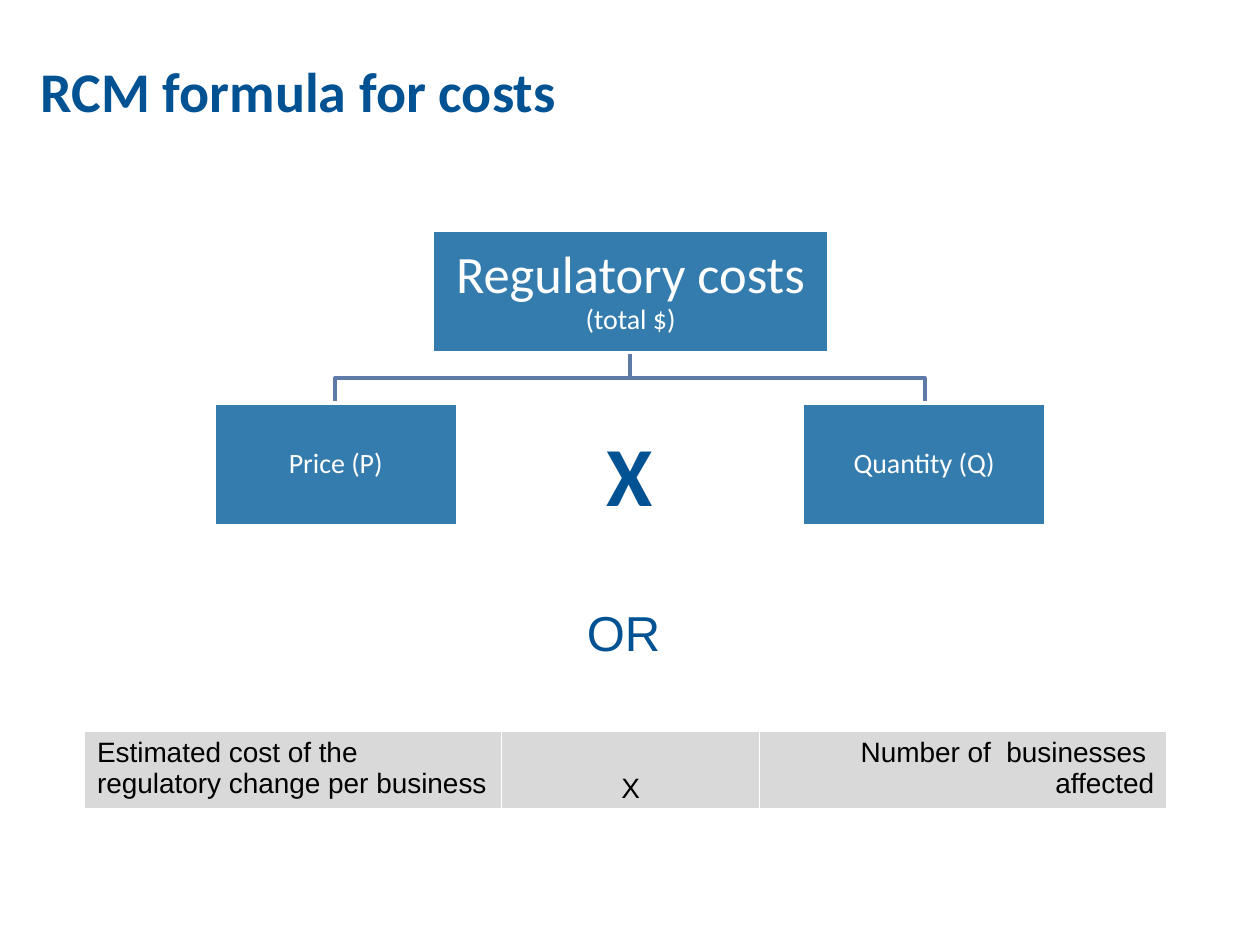
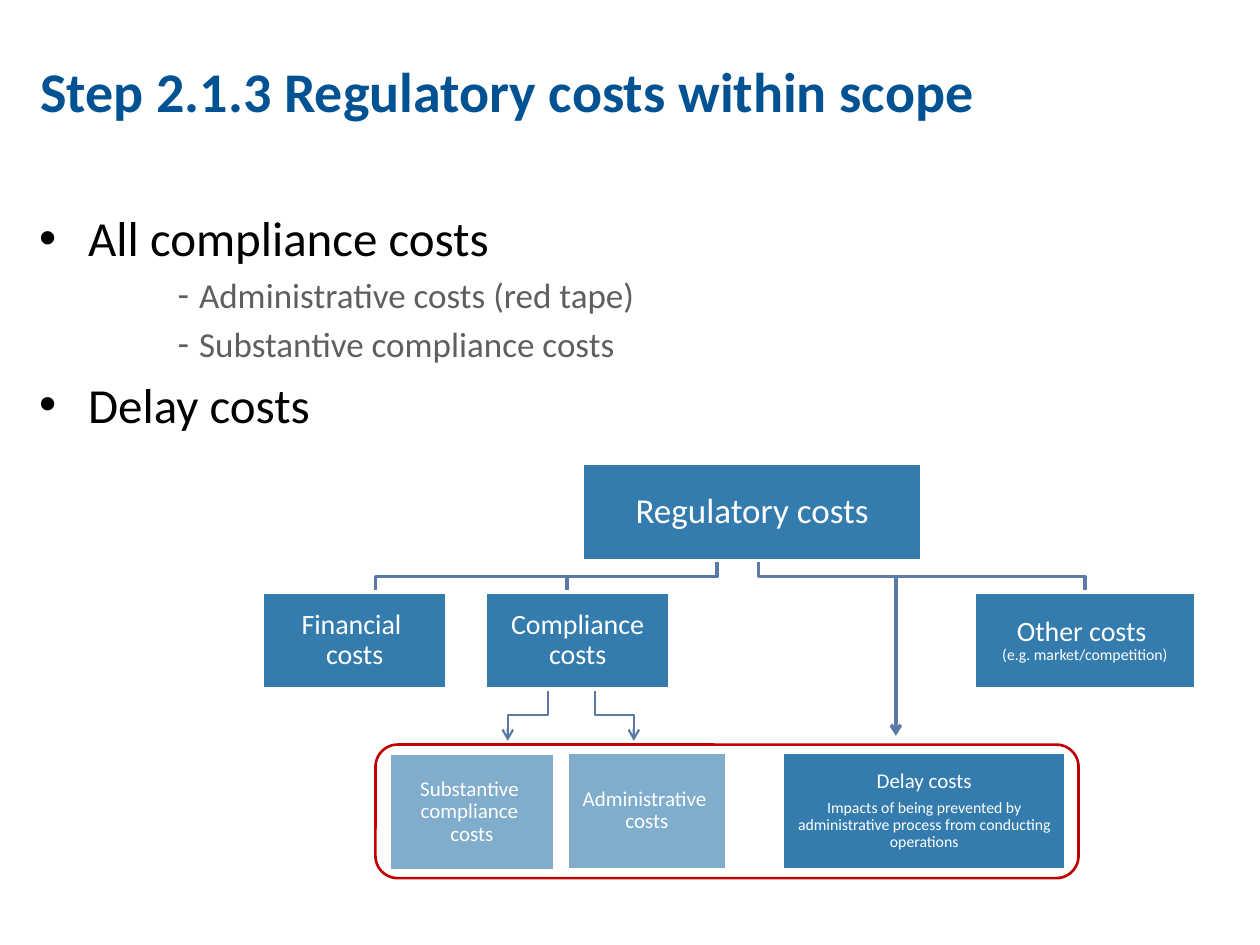
from lxml.etree import SubElement
from pptx import Presentation
from pptx.dml.color import RGBColor
from pptx.enum.shapes import MSO_CONNECTOR as CONN, MSO_SHAPE as SHAPE
from pptx.enum.text import MSO_ANCHOR as ANCHOR, MSO_AUTO_SIZE as FIT, PP_ALIGN as ALIGN
from pptx.oxml.ns import qn
from pptx.util import Inches, Pt

COLORS = {
    "title": "005293", "box": "347CAE", "light": "80ADCC", "line": "5E7AA7",
    "arrow": "597AA7", "scope": "C00000", "cell": "D9D9D9", "sub": "5F5F5F",
    "white": "FFFFFF", "black": "000000",
}

FORMULA_TITLE = "RCM formula for costs"
FORMULA_BOXES = [
    ((3.43, 1.83, 3.15, 0.97), "box", [[("Regulatory costs\v", 30), ("(total $)", 16)]]),
    ((1.7, 3.2, 1.93, 0.97), "box", [[("Price (P)", 16)]]),
    ((6.37, 3.2, 1.93, 0.97), "box", [[("Quantity (Q)", 16)]]),
]
FORMULA_ELBOWS = [((5, 2.8), (x, 3.2), "line", 2, False) for x in (2.66, 7.34)]
FORMULA_CELLS = [
    ("Estimated cost of the regulatory change per business", 3.31, ALIGN.LEFT, ANCHOR.TOP),
    ("X", 2.05, ALIGN.CENTER, ANCHOR.BOTTOM),
    ("Number of  businesses \vaffected", 3.23, ALIGN.RIGHT, ANCHOR.TOP),
]

SCOPE_TITLE = "Step 2.1.3 Regulatory costs within scope"
SCOPE_BULLETS = [
    (0, "All compliance costs"),
    (2, "Administrative costs (red tape)"),
    (2, "Substantive compliance costs"),
    (0, "Delay costs"),
]
BULLET_STYLES = {
    0: ("•", 0.39, -0.39, 28, "black"),
    2: ("-", 1.27, -0.17, 20, "sub"),
}
SCOPE_BOXES = [
    ((4.62, 3.68, 2.7, 0.77), "box", [[("Regulatory costs", 20)]]),
    ((2.08, 4.7, 1.47, 0.77), "box", [[("Financial \vcosts", 16)]]),
    ((3.85, 4.7, 1.47, 0.77), "box", [[("Compliance costs", 16)]]),
    ((7.73, 4.7, 1.76, 0.77), "box",
     [[("Other costs \v", 16), ("(e.g. market/competition)", 9)]]),
    ((3.09, 5.98, 1.31, 0.93), "light", [[("Substantive \vcompliance \vcosts", 12)]]),
    ((4.5, 5.97, 1.27, 0.93), "light", [[("Administrative \vcosts", 12)]]),
    ((6.21, 5.97, 2.25, 0.93), "box",
     [[("Delay costs", 12)],
      [("Impacts of being prevented by administrative process from conducting operations", 9)]]),
]
SCOPE_ELBOWS = [
    ((4.72, 5.47), (5.03, 5.88), "arrow", 1.25, True),
    ((4.35, 5.47), (4.03, 5.88), "arrow", 1.25, True),
    ((6.02, 4.44), (8.61, 4.71), "line", 2, False),
    ((5.69, 4.44), (2.98, 4.71), "arrow", 2, False),
]
SCOPE_LINES = [
    ((7.11, 4.57), (7.11, 5.84), "arrow", 2, True),
    ((4.5, 4.57), (4.5, 4.7), "arrow", 2, False),
]


def rgb(name):
    return RGBColor.from_string(COLORS[name])


def inches(values):
    return [Inches(v) for v in values]


def style(font, size, color, name="Calibri", bold=False):
    font.size, font.name, font.bold = Pt(size), name, bold
    font.color.rgb = rgb(color)


def place(sp, box):
    sp.left, sp.top, sp.width, sp.height = inches(box)


def add_slide(prs, layout, title):
    s = prs.slides.add_slide(prs.slide_layouts[layout])
    sp = s.shapes.title
    place(sp, (0.22, 0.4, 9.47, 0.63))
    tf = sp.text_frame
    tf.text = title
    tf.auto_size = FIT.NONE
    tf.vertical_anchor = ANCHOR.MIDDLE
    p = tf.paragraphs[0]
    p.alignment = ALIGN.LEFT
    style(p.runs[0].font, 32, "title", bold=True)
    return s


def add_box(s, box, fill, paragraphs):
    sp = s.shapes.add_shape(SHAPE.RECTANGLE, *inches(box))
    sp.shadow.inherit = False
    sp.fill.solid()
    sp.fill.fore_color.rgb = rgb(fill)
    sp.line.color.rgb = rgb("white")
    sp.line.width = Pt(2)
    tf = sp.text_frame
    tf.word_wrap = True
    tf.vertical_anchor = ANCHOR.MIDDLE
    tf.margin_left = tf.margin_right = tf.margin_top = tf.margin_bottom = Inches(0.01)
    for i, parts in enumerate(paragraphs):
        p = tf.add_paragraph() if i else tf.paragraphs[0]
        p.alignment = ALIGN.CENTER
        p.line_spacing = 0.9
        if i < len(paragraphs) - 1:
            p.space_after = Pt(4)
        for text, size in parts:
            r = p.add_run()
            r.text = text.rstrip("\v").split("\v")[0]
            style(r.font, size, "white")
            for line in text.split("\v")[1:]:
                p.add_line_break()
                if line:
                    r = p.add_run()
                    r.text = line
                    style(r.font, size, "white")


def style_connector(c, color, width, arrow):
    c.line.color.rgb = rgb(color)
    c.line.width = Pt(width)
    sppr = c._element.spPr
    if arrow:
        SubElement(sppr.find(qn("a:ln")), qn("a:tailEnd"), type="arrow")
    SubElement(sppr, qn("a:effectLst"))


def add_line(s, start, end, color, width, arrow):
    c = s.shapes.add_connector(CONN.STRAIGHT, *inches(start + end))
    style_connector(c, color, width, arrow)


def add_elbow(s, start, end, color, width, arrow):
    (x1, y1), (x2, y2) = start, end
    cx, cy = (x1 + x2) / 2, (y1 + y2) / 2
    dx, dy = (y2 - y1) / 2, (x1 - x2) / 2
    half_h = abs(dy)
    if x2 > x1:
        dx = -dx
    c = s.shapes.add_connector(
        CONN.ELBOW, *inches((cx - dx, cy - half_h, cx + dx, cy + half_h)))
    c._element.spPr.find(qn("a:xfrm")).set("rot", "16200000" if x2 > x1 else "5400000")
    style_connector(c, color, width, arrow)


def add_label(s, box, text, size, name, bold):
    sp = s.shapes.add_textbox(*inches(box))
    tf = sp.text_frame
    tf.text = text
    tf.word_wrap = True
    tf.vertical_anchor = ANCHOR.MIDDLE
    p = tf.paragraphs[0]
    p.alignment = ALIGN.CENTER
    style(p.runs[0].font, size, "title", name, bold)


def add_borders(cell):
    tcpr = cell._tc.get_or_add_tcPr()
    for i, (side, width) in enumerate((("L", 1), ("R", 1), ("T", 1), ("B", 3))):
        ln = tcpr.makeelement(qn(f"a:ln{side}"), {"w": str(Pt(width))})
        fill = SubElement(ln, qn("a:solidFill"))
        SubElement(fill, qn("a:srgbClr"), val=COLORS["white"])
        tcpr.insert(i, ln)


def add_cost_table(s):
    frame = s.shapes.add_table(1, len(FORMULA_CELLS), *inches((0.67, 5.8, 8.58, 0.6)))
    table = frame.table
    table.first_row = table.horz_banding = False
    for i, (text, width, align, anchor) in enumerate(FORMULA_CELLS):
        table.columns[i].width = Inches(width)
        cell = table.cell(0, i)
        cell.fill.solid()
        cell.fill.fore_color.rgb = rgb("cell")
        cell.vertical_anchor = anchor
        add_borders(cell)
        p = cell.text_frame.paragraphs[0]
        p.text = text
        p.alignment = align
        for r in p.runs:
            style(r.font, 16, "black", "Arial")


def add_bullets(s):
    sp = s.placeholders[1]
    place(sp, (0.21, 1.6, 9.47, 2.0))
    tf = sp.text_frame
    tf.auto_size = FIT.NONE
    tf.vertical_anchor = ANCHOR.TOP
    for i, (level, text) in enumerate(SCOPE_BULLETS):
        char, margin, indent, size, color = BULLET_STYLES[level]
        p = tf.add_paragraph() if i else tf.paragraphs[0]
        p.text = text
        p.level = level
        p.space_before = Pt(size * 0.2 if i else 0)
        ppr = p._p.get_or_add_pPr()
        ppr.set("marL", str(Inches(margin)))
        ppr.set("indent", str(Inches(indent)))
        SubElement(ppr, qn("a:buFont"), typeface="Arial")
        SubElement(ppr, qn("a:buChar"), char=char)
        style(p.runs[0].font, size, color)


def build_formula(prs):
    s = add_slide(prs, 5, FORMULA_TITLE)
    for elbow in FORMULA_ELBOWS:
        add_elbow(s, *elbow)
    for box in FORMULA_BOXES:
        add_box(s, *box)
    add_label(s, (4.03, 3.27, 1.93, 0.97), "X", 48, "Calibri", True)
    add_cost_table(s)
    add_label(s, (4.5, 4.73, 0.9, 0.57), "OR", 28, "Arial", False)


def build_scope(prs):
    s = add_slide(prs, 1, SCOPE_TITLE)
    add_bullets(s)
    for elbow in SCOPE_ELBOWS:
        add_elbow(s, *elbow)
    for line in SCOPE_LINES:
        add_line(s, *line)
    for box in SCOPE_BOXES:
        add_box(s, *box)
    frame = s.shapes.add_shape(SHAPE.ROUNDED_RECTANGLE, *inches((2.98, 5.91, 5.58, 1.06)))
    frame.shadow.inherit = False
    frame.fill.background()
    frame.line.color.rgb = rgb("scope")
    frame.line.width = Pt(1.5)


def main():
    prs = Presentation()
    prs.slide_width, prs.slide_height = Inches(10), Inches(7.5)
    build_formula(prs)
    build_scope(prs)
    prs.save("out.pptx")


if __name__ == "__main__":
    main()
